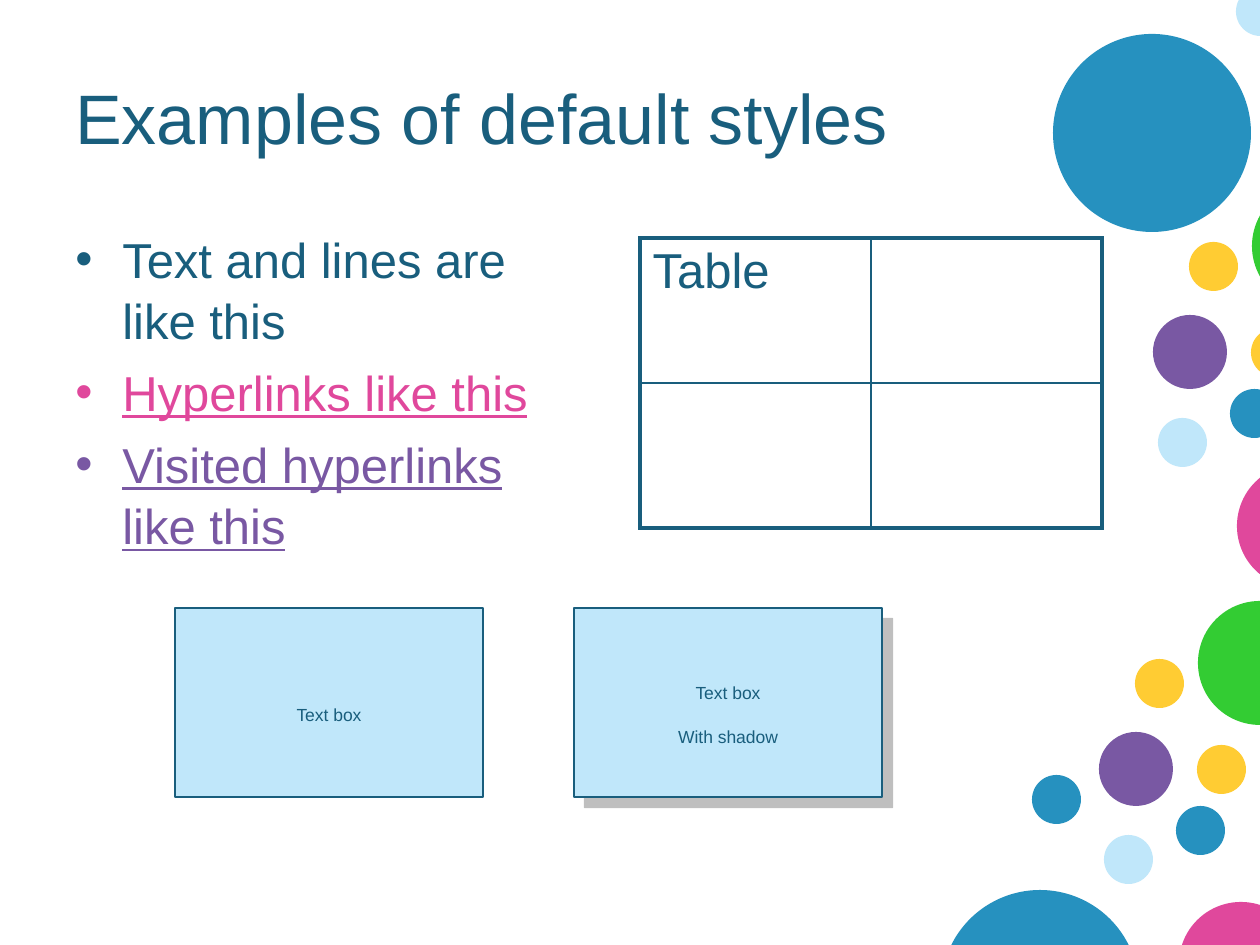
from lxml import etree
from pptx import Presentation
from pptx.dml.color import RGBColor
from pptx.enum.shapes import MSO_SHAPE
from pptx.enum.text import MSO_ANCHOR, PP_ALIGN
from pptx.oxml.ns import qn
from pptx.util import Emu, Pt

OVAL, RECT = MSO_SHAPE.OVAL, MSO_SHAPE.RECTANGLE
MIDDLE, CENTER = MSO_ANCHOR.MIDDLE, PP_ALIGN.CENTER
FONT = "Arial"
INK, PINK, PURPLE = "195E7D", "E0489C", "7958A3"
BLUE, PALE, GREEN, YELLOW = "2691BF", "C0E7FA", "33CC33", "FFCC33"
SMALL, MID, LARGE, HUGE = 49, 74, 124, 198

# Dots as left, top, size, colour; the cluster is relative to its corner.
CLUSTER = [
    (99, 0, LARGE, GREEN), (36, 58, SMALL, YELLOW), (0, 131, MID, PURPLE),
    (98, 144, SMALL, YELLOW), (5, 234, SMALL, PALE), (77, 205, SMALL, BLUE),
]
SINGLES = [
    (1237, 464, LARGE, PINK), (1032, 775, SMALL, BLUE), (1053, 34, HUGE, BLUE),
    (941, 890, HUGE, BLUE), (1179, 902, LARGE, PINK), (1236, -13, SMALL, PALE),
]


def px(n):
    return Emu(round(n * 914400 / 126))


def rgb(code):
    return RGBColor.from_string(code)


def node(parent, tag, **attrs):
    """Add a DrawingML child element."""
    return etree.SubElement(parent, qn(tag), {k: str(v) for k, v in attrs.items()})


def style(para, size, color=INK):
    for run in para.runs:
        run.font.name = FONT
        run.font.size = Pt(size)
        run.font.color.rgb = rgb(color)


def shape(slide, kind, box, fill):
    item = slide.shapes.add_shape(kind, *map(px, box))
    item.shadow.inherit = False
    item.fill.solid()
    item.fill.fore_color.rgb = rgb(fill)
    item.line.fill.background()
    return item


def dots(slide, left, top, group):
    for x, y, size, color in group:
        shape(slide, OVAL, (left + x, top + y, size, size), color)


def title(slide, box, text):
    frame = slide.shapes.add_textbox(*map(px, box)).text_frame
    frame.word_wrap = True
    frame.vertical_anchor = MIDDLE
    frame.text = text
    style(frame.paragraphs[0], 40)


def bullets(slide, box, items):
    frame = slide.shapes.add_textbox(*map(px, box)).text_frame
    frame.word_wrap = True
    frame.text = "\n".join(text for text, _, _ in items)
    for i, (para, (_, color, under)) in enumerate(zip(frame.paragraphs, items)):
        para.line_spacing = 1.05
        para.space_before = Pt(5.6 if i else 0)
        style(para, 28, color)
        para.runs[0].font.underline = under
        props = para._p.get_or_add_pPr()
        props.set("marL", str(px(47)))
        props.set("indent", str(-px(47)))
        node(props, "a:buFont", typeface=FONT)
        node(props, "a:buChar", char="•")


def border(cell, side, width):
    line = node(cell._tc.get_or_add_tcPr(), "a:ln" + side, w=Pt(width))
    node(node(line, "a:solidFill"), "a:srgbClr", val=INK)


def grid(slide, box, rows):
    """Draw a table with a heavy frame and thin inner lines."""
    tall, wide = len(rows), len(rows[0])
    table = slide.shapes.add_table(tall, wide, *map(px, box)).table
    table.first_row = table.horz_banding = False
    for r, row in enumerate(rows):
        for c, text in enumerate(row):
            cell = table.cell(r, c)
            cell.text = text
            style(cell.text_frame.paragraphs[0], 28)
            edges = {"L": c == 0, "R": c == wide - 1, "T": r == 0, "B": r == tall - 1}
            for side, outer in edges.items():
                border(cell, side, 2.25 if outer else 1)
            cell.fill.background()


def label(slide, box, text, shadow=False):
    item = shape(slide, RECT, box, PALE)
    item.line.color.rgb = rgb(INK)
    item.line.width = Pt(0.75)
    frame = item.text_frame
    frame.word_wrap = False
    frame.vertical_anchor = MIDDLE
    frame.margin_top, frame.margin_bottom = px(24), 0
    frame.text = text
    for i, para in enumerate(frame.paragraphs):
        para.alignment = CENTER
        para.space_before = Pt(13 if i else 0)
        style(para, 10)
    if shadow:
        effects = item._element.spPr.find(qn("a:effectLst"))
        cast = node(effects, "a:outerShdw", dist=Pt(8.5), dir=45 * 60000,
                    algn="ctr", rotWithShape=0)
        node(node(cast, "a:srgbClr", val="808080"), "a:alpha", val=50000)


def main():
    deck = Presentation()
    deck.slide_width, deck.slide_height = px(1260), px(945)
    slide = deck.slides.add_slide(deck.slide_layouts[6])
    for left, top in ((1099, 601), (1153, 184)):
        dots(slide, left, top, CLUSTER)
    dots(slide, 0, 0, SINGLES)
    title(slide, (63, 38, 997, 158), "Examples of default styles")
    bullets(slide, (63, 220, 514, 624), [
        ("Text and lines are like this", INK, False),
        ("Hyperlinks like this", PINK, True),
        ("Visited hyperlinks like this", PURPLE, True),
    ])
    grid(slide, (640, 238, 462, 290), [["Table", ""], ["", ""]])
    label(slide, (175, 608, 308, 189), "Text box")
    label(slide, (574, 608, 308, 189), "Text box\nWith shadow", shadow=True)
    deck.save("out.pptx")


if __name__ == "__main__":
    main()
